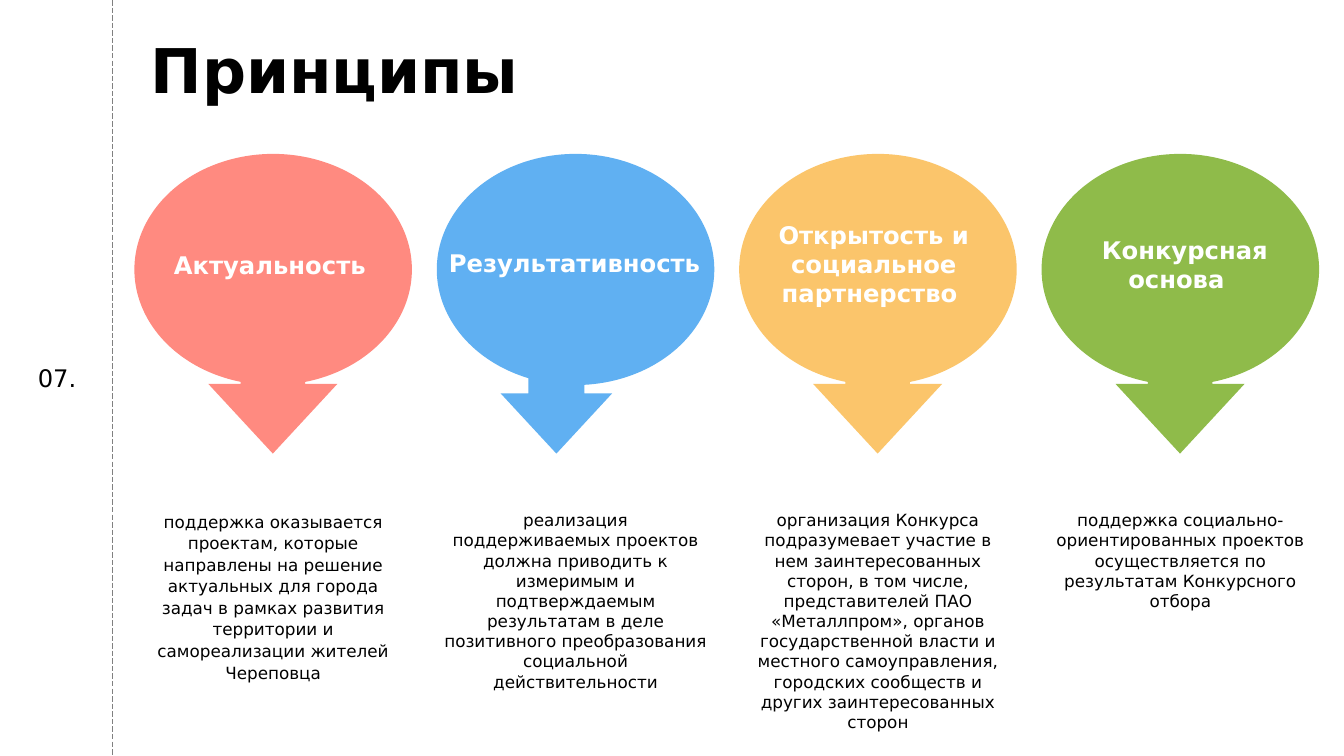
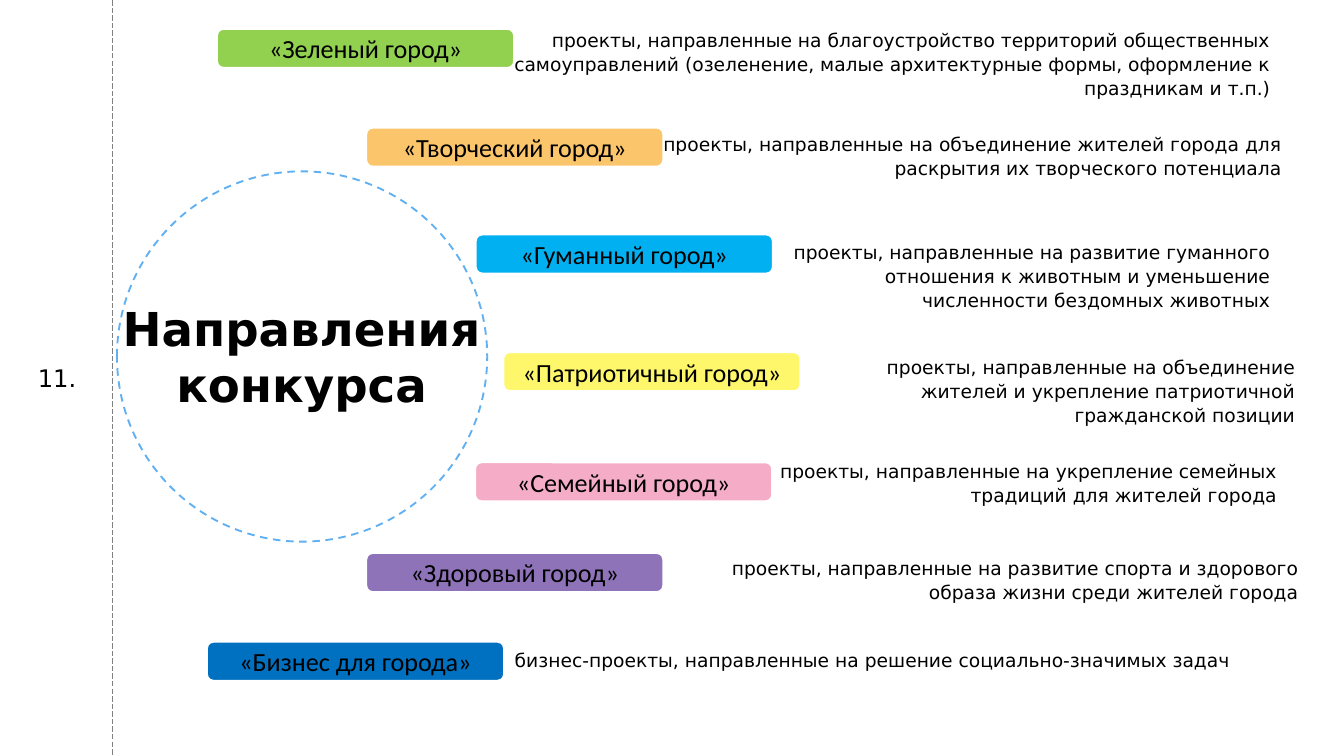
from dataclasses import dataclass
from pptx import Presentation
from pptx.dml.color import RGBColor
from pptx.enum.dml import MSO_LINE
from pptx.enum.shapes import MSO_CONNECTOR, MSO_SHAPE
from pptx.enum.text import MSO_ANCHOR, MSO_AUTO_SIZE, PP_ALIGN
from pptx.oxml.ns import qn
from pptx.util import Inches, Pt

COLUMNS, ROWS = 20, 11.25
CELL = Inches(1)

BLACK = RGBColor(0x00, 0x00, 0x00)
WHITE = RGBColor(0xFF, 0xFF, 0xFF)
GREY = RGBColor(0x80, 0x80, 0x80)
CORAL = RGBColor(0xFF, 0x8A, 0x80)
SKY = RGBColor(0x60, 0xB0, 0xF2)
AMBER = RGBColor(0xFB, 0xC5, 0x6B)
OLIVE = RGBColor(0x8F, 0xBB, 0x4A)
LIME = RGBColor(0x92, 0xD0, 0x50)
CYAN = RGBColor(0x00, 0xB0, 0xF0)
YELLOW = RGBColor(0xFE, 0xF7, 0x6C)
PINK = RGBColor(0xF5, 0xAD, 0xC7)
VIOLET = RGBColor(0x8E, 0x73, 0xB9)
BLUE = RGBColor(0x00, 0x70, 0xC0)

MAIN_FONT, TAG_FONT = "DejaVu Sans", "Calibri"
LOOSE = {"spacing": 1.07, "after": 8}


@dataclass
class Box:
    left: float
    top: float
    width: float
    height: float

    def inner(self, left, top, width, height):
        return Box(self.left + left, self.top + top, width, height)

    def lengths(self):
        return [round(side * CELL) for side in (self.left, self.top, self.width, self.height)]


SLIDE = Box(0, 0, COLUMNS, ROWS)

PRINCIPLES = [
    (CORAL, "Актуальность ", (0.47, 1.39, 3.22, 0.56), (1.1, 1.92),
     "поддержка оказывается проектам, которые направлены на решение актуальных "
     "для города задач в рамках развития территории и самореализации жителей Череповца", LOOSE),
    (SKY, "Результативность ", (0, 1.35, 4.23, 0.54), (0.95, 1.66),
     "реализация поддерживаемых проектов должна приводить к измеримым и подтверждаемым "
     "результатам в деле позитивного преобразования социальной действительности", {}),
    (AMBER, "Открытость и социальное партнерство ", (0.44, 0.94, 3.13, 1.41), (1.1, 1.92),
     "организация Конкурса подразумевает участие в нем заинтересованных сторон, в том числе, "
     "представителей ПАО «Металлпром», органов государственной власти и местного самоуправления, "
     "городских сообществ и других заинтересованных сторон", {}),
    (OLIVE, " Конкурсная основа ", (0.63, 1.16, 2.88, 0.98), (1.1, 1.92),
     "поддержка социально-ориентированных проектов осуществляется по результатам "
     "Конкурсного отбора", {}),
]

DIRECTIONS = [
    (LIME, "«Зеленый город»", (3.23, 0.43), (6.83, 0.36, 12.17, 1.15),
     "проекты, направленные на благоустройство территорий общественных самоуправлений "
     "(озеленение, малые архитектурные формы, оформление к праздникам и т.п.)"),
    (AMBER, "«Творческий город»", (5.45, 1.9), (9.36, 1.9, 9.81, 0.79),
     "проекты, направленные на объединение жителей города для раскрытия их творческого потенциала"),
    (CYAN, "«Гуманный город»", (7.08, 3.49), (11.38, 3.51, 7.62, 1.18),
     "проекты, направленные на развитие гуманного отношения к животным "
     "и уменьшение численности бездомных животных"),
    (YELLOW, "«Патриотичный город»", (7.49, 5.24), (11.75, 5.23, 7.62, 0.79),
     "проекты, направленные на объединение жителей и укрепление патриотичной гражданской позиции"),
    (PINK, "«Семейный город»", (7.07, 6.88), (10.96, 6.77, 8.14, 0.79),
     "проекты, направленные на укрепление семейных традиций для жителей города"),
    (VIOLET, "«Здоровый город»", (5.45, 8.23), (9.73, 8.21, 9.69, 0.79),
     "проекты, направленные на развитие спорта и здорового образа жизни среди жителей города"),
    (BLUE, "«Бизнес для города»", (3.08, 9.55), (7.5, 9.58, 10.99, 0.43),
     "бизнес-проекты, направленные на решение социально-значимых задач "),
]


def write(frame, text, size, font=MAIN_FONT, color=BLACK, bold=False,
          align=PP_ALIGN.CENTER, spacing=None, after=None):
    frame.word_wrap = True
    para = frame.paragraphs[0]
    para.alignment = align
    if spacing is not None:
        para.line_spacing = spacing
    if after is not None:
        para.space_after = Pt(after)
    span = para.add_run()
    span.text = text
    span.font.name, span.font.size, span.font.bold = font, Pt(size), bold
    span.font.color.rgb = color


def add_text(shapes, box, text, size, tight=False, **style):
    frame = shapes.add_textbox(*box.lengths()).text_frame
    if tight:
        frame.margin_left = frame.margin_top = frame.margin_right = frame.margin_bottom = 0
    write(frame, text, size, **style)
    frame.auto_size = MSO_AUTO_SIZE.SHAPE_TO_FIT_TEXT


def add_figure(shapes, preset, box, fill=None, outline=None, dash=None):
    figure = shapes.add_shape(preset, *box.lengths())
    figure.shadow.inherit = False
    if fill is None:
        figure.fill.background()
    else:
        figure.fill.solid()
        figure.fill.fore_color.rgb = fill
    if outline is None:
        figure.line.fill.background()
    else:
        figure.line.color.rgb = outline
        figure.line.width = Pt(2)
        if dash is not None:
            figure.line.dash_style = dash
    return figure


def add_margin(page, box, number):
    add_text(page.shapes, box.inner(0.4, 5.34, 0.9, 0.45), number, 25.9,
             tight=True, spacing=Pt(36.3))
    left, top, _, height = box.inner(1.67, 0, 0, box.height).lengths()
    rule = page.shapes.add_connector(MSO_CONNECTOR.STRAIGHT, left, top, left, top + height)
    rule.line.color.rgb = GREY
    rule.line.width = Pt(0.75)
    rule.line.dash_style = MSO_LINE.LONG_DASH
    properties = rule._element.spPr
    properties.append(properties.makeelement(qn("a:effectLst"), {}))


def add_principle(page, box, color, name, name_place, arrow_place, details, style):
    balloon = page.shapes.add_group_shape().shapes
    add_figure(balloon, MSO_SHAPE.OVAL, box.inner(0, 0, box.width, 3.44), color)
    arrow_left, arrow_width = arrow_place
    arrow = add_figure(balloon, MSO_SHAPE.DOWN_ARROW,
                       box.inner(arrow_left, 2.41, arrow_width, 2.05), color)
    arrow.adjustments[0], arrow.adjustments[1] = 0.5, 0.54
    add_text(page.shapes, box.inner(*name_place), name, 26, color=WHITE, bold=True)
    add_text(page.shapes, box.inner(0, 5.25, box.width, 3.13), details, 18, **style)


def add_direction(page, box, color, name, tag_place, details_place, details):
    add_text(page.shapes, box.inner(*details_place), details, 20, align=PP_ALIGN.RIGHT, **LOOSE)
    tag = add_figure(page.shapes, MSO_SHAPE.ROUNDED_RECTANGLE,
                     box.inner(*tag_place, 4.42, 0.58), color, outline=WHITE)
    tag.text_frame.vertical_anchor = MSO_ANCHOR.MIDDLE
    write(tag.text_frame, name, 28, font=TAG_FONT)


def add_hub(page, box, text):
    hub = page.shapes.add_group_shape().shapes
    add_figure(hub, MSO_SHAPE.OVAL, box, outline=SKY, dash=MSO_LINE.DASH)
    add_text(hub, box.inner(0.02, 1.91, 5.46, 1.56), text, 50, tight=True, bold=True)


def principles_slide(page, box):
    for index, principle in enumerate(PRINCIPLES):
        add_principle(page, box.inner(2 + 4.5 * index, 2.29, 4.13, 8.4), *principle)
    add_text(page.shapes, box.inner(2.24, 0.26, 10.42, 1.33), "Принципы", 66, tight=True,
             bold=True, align=PP_ALIGN.LEFT, spacing=Pt(94.6))
    add_margin(page, box, "07.")


def directions_slide(page, box):
    add_hub(page, box.inner(1.74, 2.55, 5.51, 5.51), "Направления конкурса")
    add_margin(page, box, "11.")
    for direction in DIRECTIONS:
        add_direction(page, box, *direction)


def main():
    deck = Presentation()
    deck.slide_width, deck.slide_height = SLIDE.lengths()[2:]
    for build in (principles_slide, directions_slide):
        build(deck.slides.add_slide(deck.slide_layouts[6]), SLIDE)
    deck.save("out.pptx")


if __name__ == "__main__":
    main()
